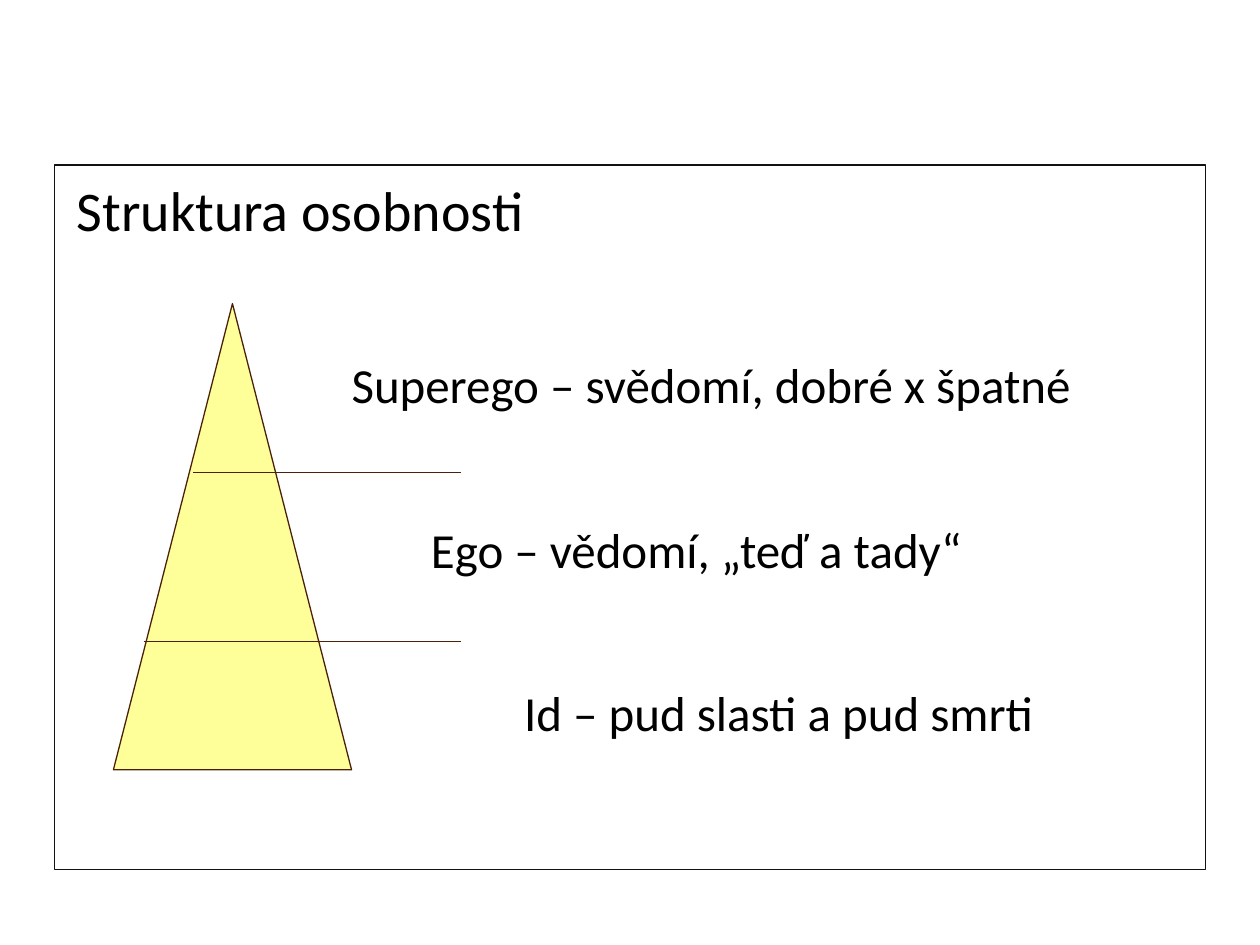
from lxml.etree import SubElement
from pptx import Presentation
from pptx.dml.color import RGBColor
from pptx.enum.shapes import MSO_CONNECTOR, MSO_SHAPE
from pptx.enum.text import MSO_ANCHOR, MSO_AUTO_SIZE, PP_ALIGN
from pptx.oxml.ns import qn
from pptx.util import Inches, Pt

BLACK = RGBColor(0x00, 0x00, 0x00)
WHITE = RGBColor(0xFF, 0xFF, 0xFF)
FRAME = RGBColor(0x11, 0x11, 0x11)
YELLOW = RGBColor(0xFF, 0xFF, 0x99)
BROWN = RGBColor(0x4A, 0x21, 0x0A)

LEVELS = [
    ("Superego – svědomí, dobré x špatné", 2.26, 0),
    ("Ego – vědomí, „teď a tady“", 2.89, 61),
    ("Id – pud slasti a pud smrti", 3.63, 59.5),
]
DIVIDERS = [(1.14, 5.09), (1.53, 3.75)]
DIVIDER_END = 3.66


class SlideBuilder:
    """Holds the text style and the current slide, and adds its elements."""

    def __init__(self, s, font="Calibri", line_width=0.75):
        self.s = s
        self.font = font
        self.line_width = Pt(line_width)

    def place(self, sp, left, top, width, height):
        box = {"left": left, "top": top, "width": width, "height": height}
        for name, value in box.items():
            setattr(sp, name, Inches(value))

    def outline(self, sp, fill, line):
        sp.fill.solid()
        sp.fill.fore_color.rgb = fill
        sp.line.color.rgb = line
        sp.line.width = self.line_width

    def frame_text(self, sp, top_margin):
        tf = sp.text_frame
        formats = {
            "word_wrap": True,
            "auto_size": MSO_AUTO_SIZE.NONE,
            "vertical_anchor": MSO_ANCHOR.TOP,
            "margin_top": Inches(top_margin),
        }
        for name, value in formats.items():
            setattr(tf, name, value)
        return tf

    def add_text(self, p, text, size, space_before=0):
        formats = {"alignment": PP_ALIGN.LEFT, "space_before": Pt(space_before)}
        for name, value in formats.items():
            setattr(p, name, value)
        r = p.add_run()
        r.text = text
        for name, value in {"name": self.font, "size": Pt(size)}.items():
            setattr(r.font, name, value)
        r.font.color.rgb = BLACK

    def title(self, text, *box):
        sp = self.s.shapes.title
        self.place(sp, *box)
        tf = self.frame_text(sp, 0.05)
        self.add_text(tf.paragraphs[0], text, 32)

    def body(self, levels, *box):
        sp = self.s.placeholders[1]
        self.place(sp, *box)
        self.outline(sp, WHITE, FRAME)
        self.s.shapes.title.element.addprevious(sp.element)
        tf = self.frame_text(sp, 1.5)
        for i, (text, indent, gap) in enumerate(levels):
            p = tf.add_paragraph() if i else tf.paragraphs[0]
            self.add_text(p, text, 28, gap)
            pPr = p._p.get_or_add_pPr()
            pPr.set("marL", str(Inches(indent)))
            pPr.set("indent", "0")
            SubElement(pPr, qn("a:buNone"))

    def triangle(self, *box):
        sp = self.s.shapes.add_shape(
            MSO_SHAPE.ISOSCELES_TRIANGLE, *map(Inches, box))
        sp.shadow.inherit = False
        self.outline(sp, YELLOW, BROWN)

    def divider(self, left, right, y):
        line = self.s.shapes.add_connector(
            MSO_CONNECTOR.STRAIGHT, *map(Inches, (left, y, right, y)))
        line.line.color.rgb = BROWN
        line.line.width = self.line_width
        SubElement(line._element.spPr, qn("a:effectLst"))


def main():
    prs = Presentation()
    prs.slide_width, prs.slide_height = Inches(10), Inches(7.5)
    builder = SlideBuilder(prs.slides.add_slide(prs.slide_layouts[1]))
    builder.title("Struktura osobnosti", 0.51, 1.34, 8.9, 0.7)
    builder.body(LEVELS, 0.43, 1.31, 9.14, 5.59)
    builder.triangle(0.9, 2.41, 1.89, 3.7)
    for left, y in DIVIDERS:
        builder.divider(left, DIVIDER_END, y)
    prs.save("out.pptx")


if __name__ == "__main__":
    main()
